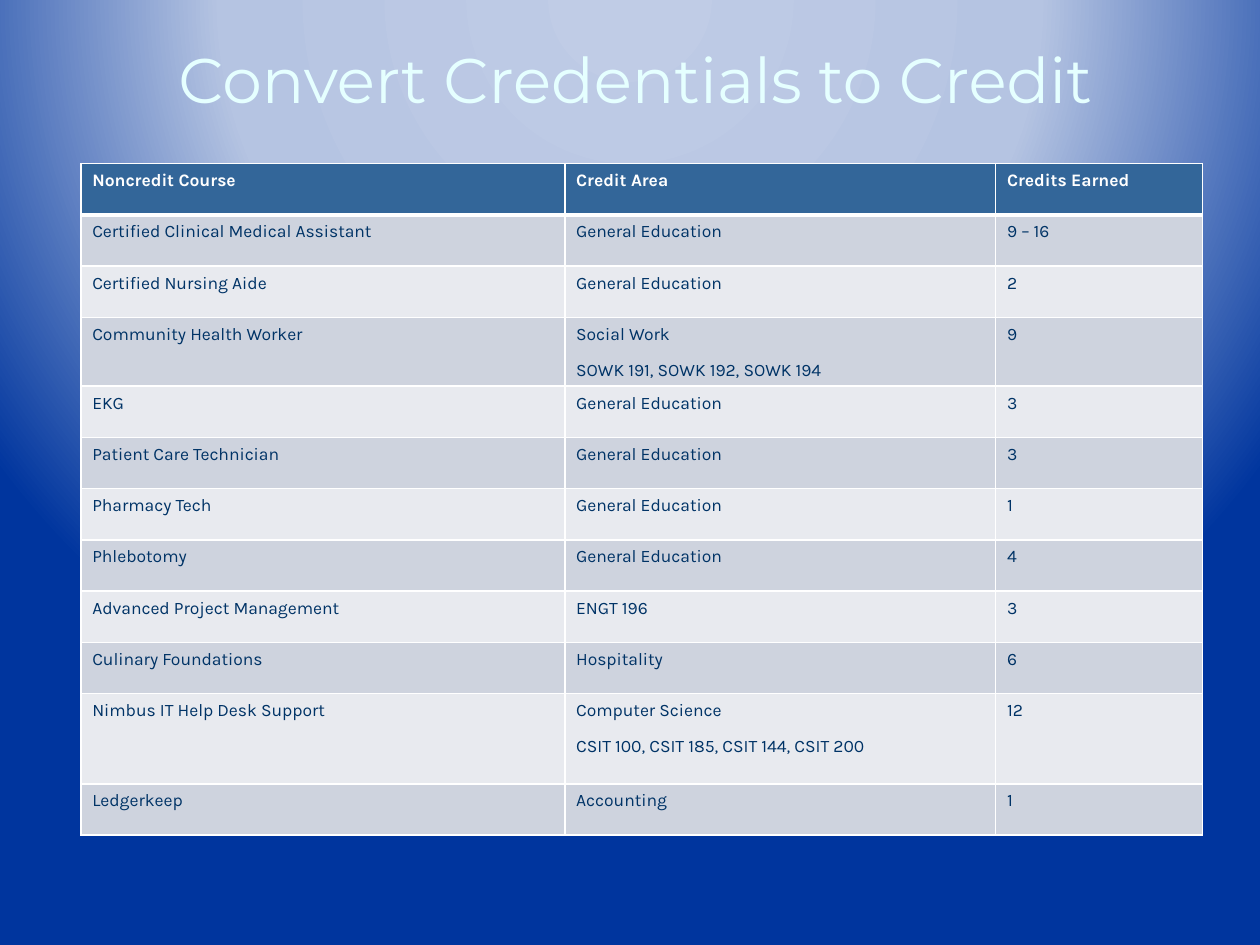
import pptx
import pptx.dml.color
import pptx.enum.text
import pptx.oxml
import pptx.oxml.ns
import pptx.util

Pt = pptx.util.Pt
RGBColor = pptx.dml.color.RGBColor

GLOW = RGBColor(0xC0, 0xCC, 0xE6)
HAZE = RGBColor(0xB5, 0xC4, 0xE2)
DEEP_BLUE = RGBColor(0x00, 0x35, 0x9E)
ICE = RGBColor(0xE5, 0xFF, 0xFF)
WHITE = RGBColor(0xFF, 0xFF, 0xFF)
NAVY = RGBColor(0x00, 0x33, 0x66)
HEADER_BLUE = RGBColor(0x33, 0x66, 0x99)
BANDS = (RGBColor(0xE8, 0xEA, 0xEF), RGBColor(0xCE, 0xD3, 0xDE))

COLUMN_WIDTHS = (276.5, 246.25, 118.25)
ROW_HEIGHT = 29.3
TALL_ROWS = {3: 39, 10: 51.5}
INSET = 6.5

COURSES = [
    ("Noncredit Course", "Credit Area", "Credits Earned"),
    ("Certified Clinical Medical Assistant", "General Education", "9 – 16"),
    ("Certified Nursing Aide", "General Education", "2"),
    ("Community Health Worker",
     "Social Work\nSOWK 191, SOWK 192, SOWK 194", "9"),
    ("EKG", "General Education", "3"),
    ("Patient Care Technician", "General Education", "3"),
    ("Pharmacy Tech", "General Education", "1"),
    ("Phlebotomy", "General Education", "4"),
    ("Advanced Project Management", "ENGT 196", "3"),
    ("Culinary Foundations", "Hospitality", "6"),
    ("Nimbus IT Help Desk Support",
     "Computer Science\nCSIT 100, CSIT 185, CSIT 144, CSIT 200", "12"),
    ("Ledgerkeep", "Accounting", "1"),
]


def paint_background(slide):
    """Radial glow centred above the top edge."""
    fill = slide.background.fill
    fill.gradient()
    gradient = slide.background._cSld.find(".//" + pptx.oxml.ns.qn("a:gradFill"))
    for child in list(gradient):
        gradient.remove(child)
    namespace = pptx.oxml.ns.nsdecls("a")
    stops = "".join(
        f'<a:gs pos="{position * 1000}"><a:srgbClr val="{color}"/></a:gs>'
        for position, color in ((0, GLOW), (52, HAZE), (100, DEEP_BLUE)))
    gradient.append(pptx.oxml.parse_xml(f"<a:gsLst {namespace}>{stops}</a:gsLst>"))
    gradient.append(pptx.oxml.parse_xml(
        f'<a:path {namespace} path="circle">'
        '<a:fillToRect l="50000" t="-80000" r="50000" b="180000"/></a:path>'))


def place_title(slide, left, top, width, height):
    title = slide.shapes.title
    title.left, title.top, title.width, title.height = map(
        Pt, (left, top, width, height))
    frame = title.text_frame
    frame.text = "Convert Credentials to Credit"
    frame.vertical_anchor = pptx.enum.text.MSO_ANCHOR.MIDDLE
    paragraph = frame.paragraphs[0]
    paragraph.alignment = pptx.enum.text.PP_ALIGN.CENTER
    font = paragraph.runs[0].font
    font.name, font.size = "Montserrat", Pt(36)
    font.color.rgb = ICE


def set_borders(cell, top=1, bottom=1):
    """White rules; they must come before the fill in the cell properties."""
    properties = cell._tc.get_or_add_tcPr()
    for index, (side, width) in enumerate(
            (("L", 1), ("R", 1), ("T", top), ("B", bottom))):
        properties.insert(index, pptx.oxml.parse_xml(
            f'<a:ln{side} {pptx.oxml.ns.nsdecls("a")} w="{Pt(width)}">'
            f'<a:solidFill><a:srgbClr val="{WHITE}"/></a:solidFill></a:ln{side}>'))


def fill_cell(cell, text, row):
    is_header = row == 0
    cell.margin_left = cell.margin_right = Pt(INSET)
    cell.margin_top = cell.margin_bottom = Pt(INSET / 2)
    cell.fill.solid()
    cell.fill.fore_color.rgb = HEADER_BLUE if is_header else BANDS[row % 2]
    set_borders(cell, top=3 if row == 1 else 1, bottom=3 if is_header else 1)
    cell.text_frame.text = text
    for paragraph in cell.text_frame.paragraphs:
        paragraph.line_spacing = 1.07
        paragraph.space_after = Pt(8)
        font = paragraph.runs[0].font
        font.name, font.size, font.bold = "Karla", Pt(10), is_header
        font.color.rgb = WHITE if is_header else NAVY


def place_courses(slide, left, top, width, height):
    table = slide.shapes.add_table(
        len(COURSES), len(COLUMN_WIDTHS),
        Pt(left), Pt(top), Pt(width), Pt(height)).table
    for column, column_width in zip(table.columns, COLUMN_WIDTHS):
        column.width = Pt(column_width)
    for row, course in enumerate(COURSES):
        table.rows[row].height = Pt(TALL_ROWS.get(row, ROW_HEIGHT))
        for column, text in enumerate(course):
            fill_cell(table.cell(row, column), text, row)


def main():
    presentation = pptx.Presentation()
    presentation.slide_width, presentation.slide_height = Pt(720), Pt(540)
    slide = presentation.slides.add_slide(presentation.slide_layouts[5])
    paint_background(slide)
    place_title(slide, 39, 8.75, 648, 72)
    place_courses(slide, 46.25, 93.5, sum(COLUMN_WIDTHS), 383.5)
    presentation.save("out.pptx")


if __name__ == "__main__":
    main()
